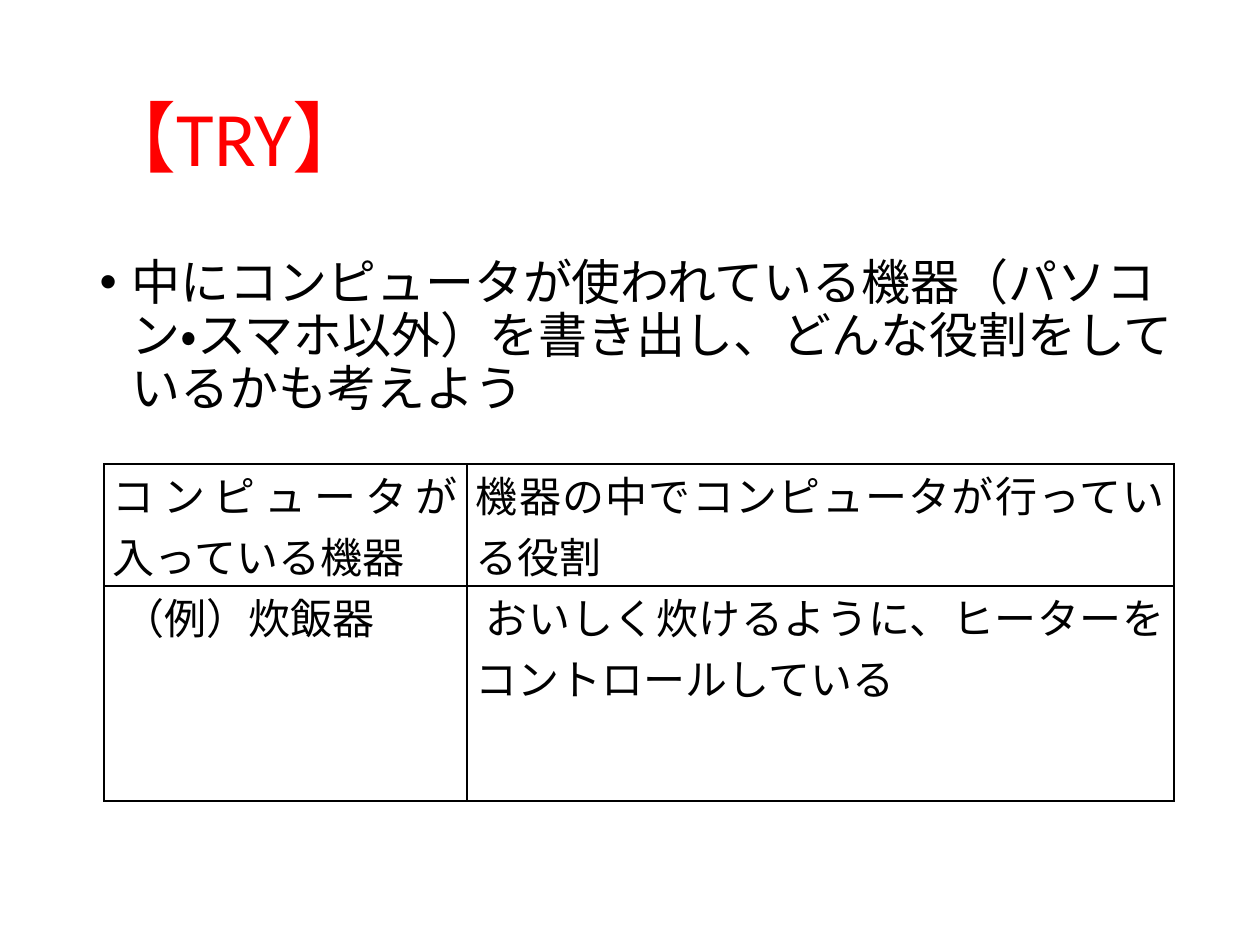
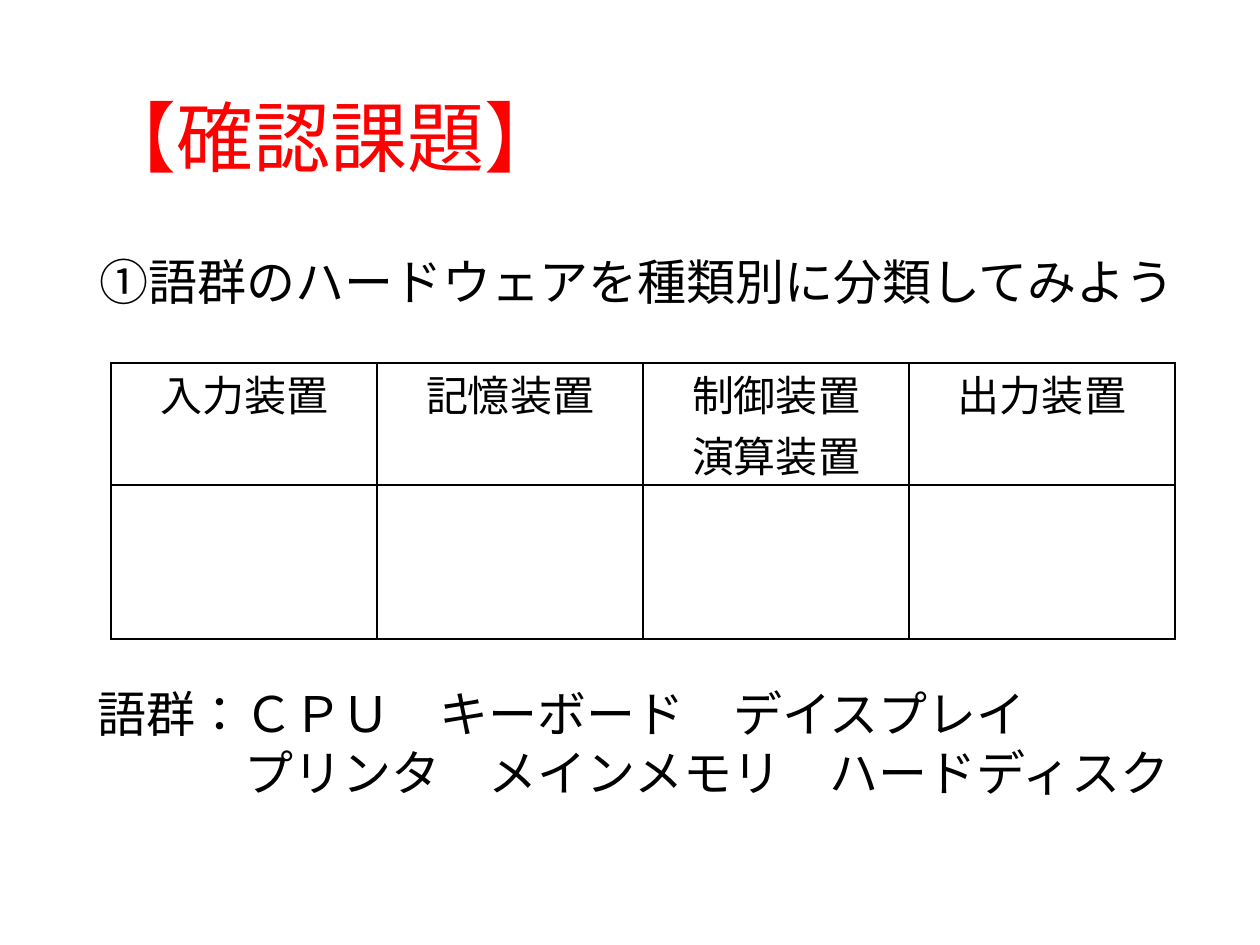
from lxml.etree import SubElement as Sub
from pptx import Presentation
from pptx.dml.color import RGBColor as Rgb
from pptx.enum.lang import MSO_LANGUAGE_ID as Lang
from pptx.enum.text import MSO_ANCHOR as Anchor, MSO_AUTO_SIZE as Fit, PP_ALIGN as Align
from pptx.oxml.ns import qn
from pptx.util import Pt

PX = 914400 // 126
COLOR = {"title": "FF0000", "text": "000000", "line": "000000"}
FONT, SERIF = "Calibri", "TeX Gyre Schola"
HEAD = (87, 50, 1086, 183)


def px(*sizes):
    """Turn pixel lengths into EMU."""
    return [size * PX for size in sizes]


def style(para, size, color="text", font=FONT, align=Align.LEFT):
    """Format a paragraph and its runs."""
    para.alignment = align
    for run in para.runs:
        run.font.size = Pt(size)
        run.font.name = font
        run.font.language_id = Lang.JAPANESE
        run.font.color.rgb = Rgb.from_string(COLOR[color])


def indent(para, left, first=0):
    """Set the left margin and first-line indent in pixels."""
    props = para._p.get_or_add_pPr()
    props.set("marL", str(left * PX))
    props.set("indent", str(first * PX))
    return props


def fill(holder, box, text, size, color, anchor):
    """Move a placeholder, fill it and return its paragraph."""
    holder.left, holder.top, holder.width, holder.height = px(*box)
    frame = holder.text_frame
    frame.text = text
    frame.auto_size = Fit.NONE
    frame.vertical_anchor = anchor
    para = frame.paragraphs[0]
    para.line_spacing = 0.9
    style(para, size, color)
    return para


def page(deck, title, body, box, bullet):
    """Add a slide with a red title and one body paragraph."""
    slide = deck.slides.add_slide(deck.slide_layouts[1])
    fill(slide.shapes.title, HEAD, title, 44, "title", Anchor.MIDDLE)
    para = fill(slide.placeholders[1], box, body, 28, "text", Anchor.TOP)
    para.space_before = Pt(10)
    if bullet:
        props = indent(para, 32, -32)
        Sub(props, qn("a:buFont"), typeface="Arial")
        Sub(props, qn("a:buChar"), char="•")
    else:
        Sub(indent(para, 0), qn("a:buNone"))
    return slide


def border(cell):
    """Draw a thin line on all four sides of a cell."""
    props = cell._tc.get_or_add_tcPr()
    for side in ("lnL", "lnR", "lnT", "lnB"):
        line = Sub(props, qn(f"a:{side}"), w=str(Pt(1)))
        paint = Sub(line, qn("a:solidFill"))
        Sub(paint, qn("a:srgbClr"), val=COLOR["line"])


def grid(slide, left, top, cols, rows, cells, align):
    """Add a ruled table from column widths, row heights and texts."""
    box = px(left, top, sum(cols), sum(rows))
    table = slide.shapes.add_table(len(rows), len(cols), *box).table
    table.first_row = table.horz_banding = False
    for col, width in zip(table.columns, px(*cols)):
        col.width = width
    for row, height, texts in zip(table.rows, px(*rows), cells):
        row.height = height
        for cell, text in zip(row.cells, texts):
            border(cell)
            cell.fill.background()
            cell.margin_left, cell.margin_right = px(9, 9)
            cell.margin_top = cell.margin_bottom = 0
            cell.text_frame.text = text
            for para in cell.text_frame.paragraphs:
                style(para, 24, align=align)
    return table


def words(slide, box, lines):
    """Add the word list, its later lines aligned after the label."""
    frame = slide.shapes.add_textbox(*px(*box)).text_frame
    frame.word_wrap = True
    frame.text = "\n".join(lines)
    for para, left in zip(frame.paragraphs, (19, 166)):
        style(para, 28, font=SERIF, align=Align.JUSTIFY)
        indent(para, left)


def tryout(deck):
    """Build the slide on devices with a computer inside."""
    slide = page(deck, "【TRY】",
                 "中にコンピュータが使われている機器（パソコン・スマホ以外）を書き出し、どんな役割をしているかも考えよう",
                 (87, 252, 1125, 183), True)
    table = grid(slide, 104, 464, (363, 707), (122, 215), [
        ("コンピュータが入っている機器", "機器の中でコンピュータが行っている役割"),
        ("（例）炊飯器", "おいしく炊けるように、ヒーターをコントロールしている"),
    ], Align.JUSTIFY)
    for cell in table.rows[1].cells:
        indent(cell.text_frame.paragraphs[0], 0, 10)


def review(deck):
    """Build the slide on sorting hardware by kind."""
    slide = page(deck, "【確認課題】", "①語群のハードウェアを種類別に分類してみよう",
                 (87, 252, 1119, 600), False)
    heads = ("入力装置", "記憶装置", "制御装置\n演算装置", "出力装置")
    grid(slide, 111, 363, (266,) * 4, (122, 154), [heads, ("",) * 4], Align.CENTER)
    words(slide, (66, 677, 1162, 131),
          ("語群：ＣＰＵ　キーボード　デイスプレイ", "プリンタ　メインメモリ　ハードディスク"))


def main():
    """Build and save the deck."""
    deck = Presentation()
    deck.slide_width, deck.slide_height = px(1260, 945)
    tryout(deck)
    review(deck)
    deck.save("out.pptx")


if __name__ == "__main__":
    main()
